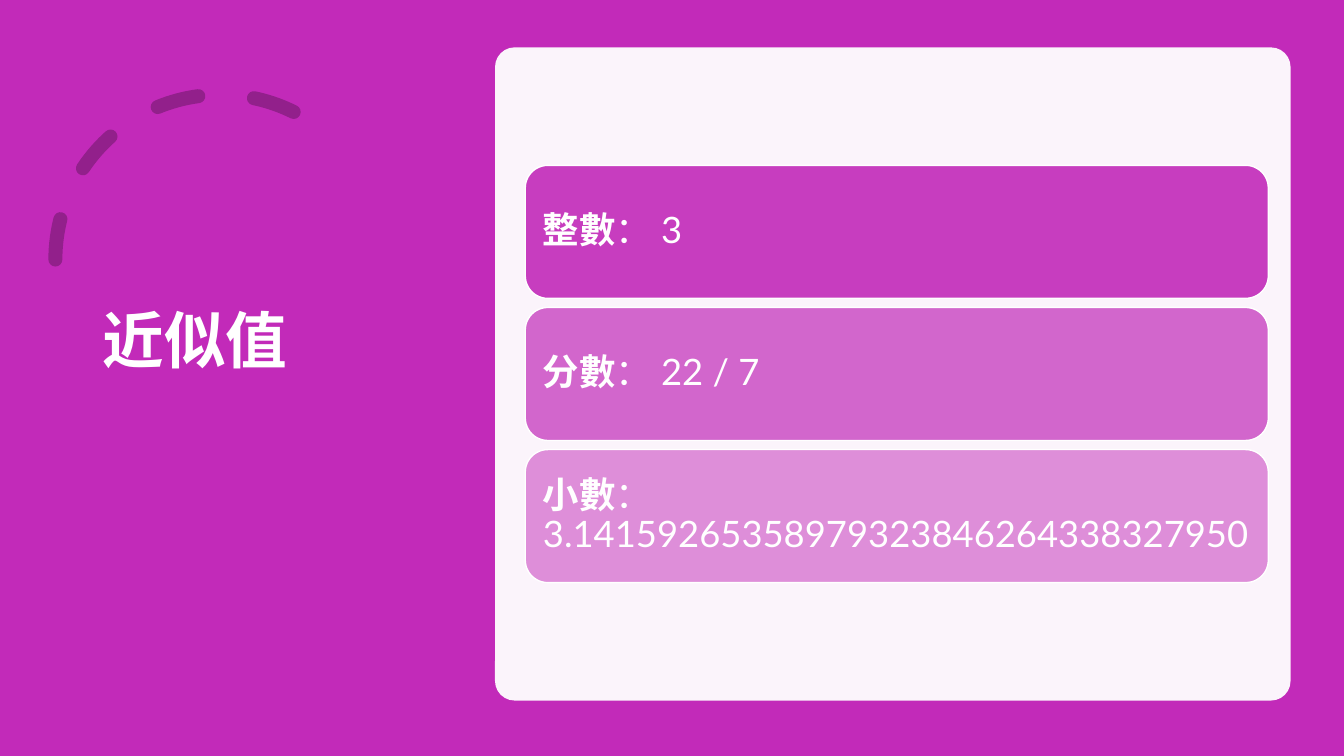
from lxml.etree import SubElement
from pptx import Presentation
from pptx.dml.color import RGBColor
from pptx.enum.dml import MSO_LINE
from pptx.enum.shapes import MSO_SHAPE as Shape
from pptx.enum.text import MSO_ANCHOR as Anchor, PP_ALIGN as Align
from pptx.oxml.ns import qn
from pptx.util import Inches, Pt

COLORS = {"magenta": "C22AB9", "purple": "92208B", "white": "FFFFFF"}
APPROXIMATIONS = [
    ("整數", "：3", 90),
    ("分數", "：22 / 7", 70),
    ("小數", "：3.14159265358979323846264338327950", 50),
]
CARD_LEFT, CARD_TOP, CARD_WIDTH, CARD_HEIGHT = 5.21, 1.64, 7.37, 1.32
CARD_GAP = 0.09


def rgb(name):
    return RGBColor.from_string(COLORS[name])


def write_text(frame, runs, size, font, insets, color="white"):
    frame.word_wrap = True
    frame.vertical_anchor = Anchor.MIDDLE
    (frame.margin_left, frame.margin_top,
     frame.margin_right, frame.margin_bottom) = map(Inches, insets)
    paragraph = frame.paragraphs[0]
    paragraph.alignment = Align.LEFT
    paragraph.line_spacing = 0.9
    for words, bold in runs:
        run = paragraph.add_run()
        run.text = words
        run.font.name = font
        run.font.size = Pt(size)
        run.font.bold = bold
        run.font.color.rgb = rgb(color)


def add_rounded_box(slide, box, fill, opacity, radius, outline=None):
    rounded = slide.shapes.add_shape(Shape.ROUNDED_RECTANGLE, *map(Inches, box))
    rounded.shadow.inherit = False
    rounded.adjustments[0] = radius
    rounded.fill.solid()
    rounded.fill.fore_color.rgb = rgb(fill)
    color_node = rounded.fill._xPr.find(qn("a:solidFill"))[0]
    SubElement(color_node, qn("a:alpha")).set("val", str(opacity * 1000))
    if outline:
        rounded.line.color.rgb = rgb(outline)
        rounded.line.width = Pt(1)
    else:
        rounded.line.fill.background()
    return rounded


def add_dashed_arc(slide, box):
    arc = slide.shapes.add_shape(Shape.ARC, *map(Inches, box))
    arc.shadow.inherit = False
    arc.adjustments[0] = 146.13
    arc.adjustments[1] = 0
    arc.fill.background()
    arc.line.color.rgb = rgb("purple")
    arc.line.width = Pt(10)
    arc.line.dash_style = MSO_LINE.DASH
    properties = arc._element.spPr
    properties.find(qn("a:xfrm")).set("flipH", "1")
    properties.find(qn("a:ln")).set("cap", "rnd")


def add_title(slide, words):
    title = slide.shapes.add_textbox(*map(Inches, (0.92, 0.7, 3.23, 6.09)))
    write_text(title.text_frame, [(words, True)], size=44, font="Calibri",
               insets=(0.1, 0.05, 0.1, 0.72))


def add_card(slide, index, label, value, opacity):
    top = CARD_TOP + index * (CARD_HEIGHT + CARD_GAP)
    card = add_rounded_box(slide, (CARD_LEFT, top, CARD_WIDTH, CARD_HEIGHT),
                           "magenta", opacity, 0.17, outline="white")
    write_text(card.text_frame, [(label, True), (value, False)], size=26,
               font="Lato", insets=(0.11, 0.11, 0.11, 0.11))


def main():
    deck = Presentation()
    deck.slide_width, deck.slide_height = Inches(13.33), Inches(7.5)
    slide = deck.slides.add_slide(deck.slide_layouts[6])
    slide.background.fill.solid()
    slide.background.fill.fore_color.rgb = rgb("magenta")

    add_dashed_arc(slide, (0.55, 0.94, 3.27, 3.27))
    add_title(slide, "近似值")
    add_rounded_box(slide, (4.91, 0.47, 7.89, 6.48), "white", 95, 0.03)
    for index, (label, value, opacity) in enumerate(APPROXIMATIONS):
        add_card(slide, index, label, value, opacity)

    deck.save("out.pptx")


if __name__ == "__main__":
    main()
